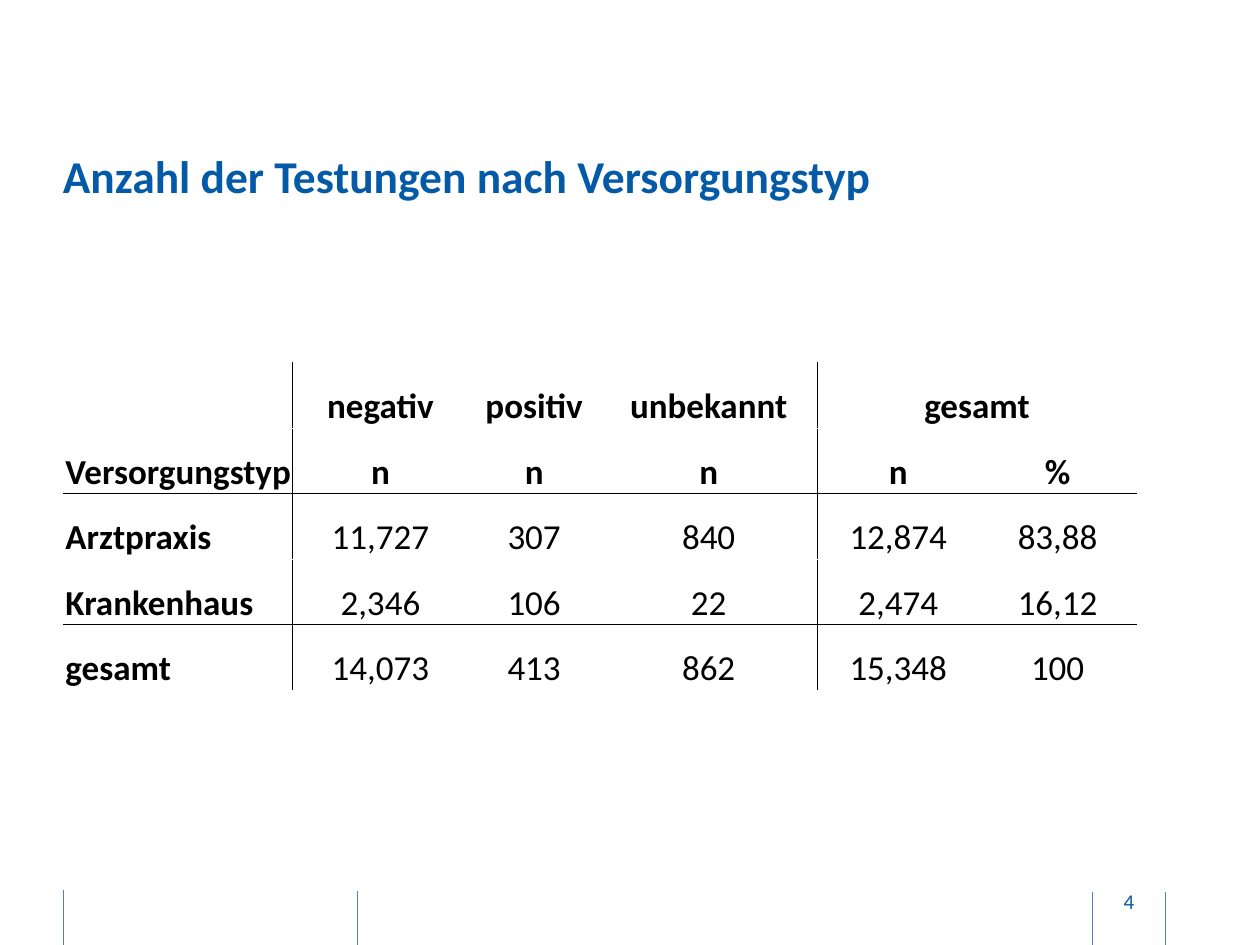
from lxml import etree
from pptx import Presentation
from pptx.dml.color import RGBColor
from pptx.enum.shapes import MSO_CONNECTOR
from pptx.enum.text import MSO_ANCHOR, PP_ALIGN
from pptx.oxml.ns import qn
from pptx.util import Inches, Pt

STRAIGHT = MSO_CONNECTOR.STRAIGHT
MIDDLE, BOTTOM = MSO_ANCHOR.MIDDLE, MSO_ANCHOR.BOTTOM
LEFT, CENTER = PP_ALIGN.LEFT, PP_ALIGN.CENTER

COLORS = {"blue": "045AA6", "rule": "4F81BD", "black": "000000"}
FONT = "Calibri"

# Footer rules: x, top, bottom
FOOTER_RULES = [(0.5, 7.06, 7.51), (2.84, 7.07, 7.51),
                (8.67, 7.08, 7.53), (9.25, 7.08, 7.53)]

COL_WIDTHS = [1.81, 1.4, 1.04, 1.73, 1.28, 1.25]
ROW_HEIGHT = 0.52
HEADER_ROWS = 2
ROWS = [
    ["", "negativ", "positiv", "unbekannt", "gesamt", ""],
    ["Versorgungstyp", "n", "n", "n", "n", "%"],
    ["Arztpraxis", "11,727", "307", "840", "12,874", "83,88"],
    ["Krankenhaus", "2,346", "106", "22", "2,474", "16,12"],
    ["gesamt", "14,073", "413", "862", "15,348", "100"],
]
# Grid lines run after these columns and rows
LINE_AFTER_COLS = (0, 3)
LINE_AFTER_ROWS = (1, 3)


def write(p, text, size, color, bold=False, align=LEFT):
    p.alignment = align
    r = p.add_run()
    r.text = text
    for name, value in {"name": FONT, "size": Pt(size), "bold": bold}.items():
        setattr(r.font, name, value)
    r.font.color.rgb = RGBColor.from_string(COLORS[color])


def add_text(s, box, text, size, pad=0, **style):
    tf = s.shapes.add_textbox(*map(Inches, box)).text_frame
    frame = {"word_wrap": True, "vertical_anchor": MIDDLE,
             "margin_left": 0, "margin_right": 0,
             "margin_top": Inches(pad), "margin_bottom": Inches(pad)}
    for name, value in frame.items():
        setattr(tf, name, value)
    write(tf.paragraphs[0], text, size, "blue", **style)


def add_rule(s, x, top, bottom):
    line = s.shapes.add_connector(
        STRAIGHT, Inches(x), Inches(top), Inches(x), Inches(bottom))
    line.line.color.rgb = RGBColor.from_string(COLORS["rule"])
    line.line.width = Pt(0.5)
    etree.SubElement(line._element.spPr, qn("a:effectLst"))


def set_borders(cell, sides):
    """Draw thin black borders; sides come in the order L, R, T, B."""
    tc_pr = cell._tc.get_or_add_tcPr()
    for i, side in enumerate(sides):
        ln = etree.Element(qn(f"a:ln{side}"), w=str(Pt(0.5)))
        fill = etree.SubElement(ln, qn("a:solidFill"))
        etree.SubElement(fill, qn("a:srgbClr"), val=COLORS["black"])
        tc_pr.insert(i, ln)


def cell_sides(row, col):
    tests = {"L": col - 1 in LINE_AFTER_COLS, "R": col in LINE_AFTER_COLS,
             "T": row - 1 in LINE_AFTER_ROWS, "B": row in LINE_AFTER_ROWS}
    return [side for side, drawn in tests.items() if drawn]


def add_test_table(s, left, top):
    frame = s.shapes.add_table(
        len(ROWS), len(COL_WIDTHS), Inches(left), Inches(top),
        Inches(sum(COL_WIDTHS)), Inches(ROW_HEIGHT * len(ROWS)))
    table = frame.table
    table.first_row = table.horz_banding = False
    for column, width in zip(table.columns, COL_WIDTHS):
        column.width = Inches(width)
    for row in table.rows:
        row.height = Inches(ROW_HEIGHT)

    layout = {"vertical_anchor": BOTTOM, "margin_left": Inches(0.01),
              "margin_right": Inches(0.01), "margin_top": Inches(0.01),
              "margin_bottom": 0}
    for i, values in enumerate(ROWS):
        for j, text in enumerate(values):
            cell = table.cell(i, j)
            for name, value in layout.items():
                setattr(cell, name, value)
            cell.fill.background()
            set_borders(cell, cell_sides(i, j))
            if text:
                write(cell.text_frame.paragraphs[0], text, 20, "black",
                      bold=i < HEADER_ROWS or j == 0,
                      align=CENTER if j else LEFT)
    # "gesamt" heads both the count and the percentage
    table.cell(0, 4).merge(table.cell(0, 5))


def main():
    prs = Presentation()
    prs.slide_width, prs.slide_height = Inches(10), Inches(7.5)
    s = prs.slides.add_slide(prs.slide_layouts[6])

    # Footer
    for rule in FOOTER_RULES:
        add_rule(s, *rule)
    add_text(s, (8.69, 6.95, 0.54, 0.4), "4", 12, pad=0.05, align=CENTER)

    # Title and table
    add_text(s, (0.5, 0.91, 8.73, 0.96),
             "Anzahl der Testungen nach Versorgungstyp", 26, bold=True)
    add_test_table(s, 0.51, 2.88)

    prs.save("out.pptx")


if __name__ == "__main__":
    main()
